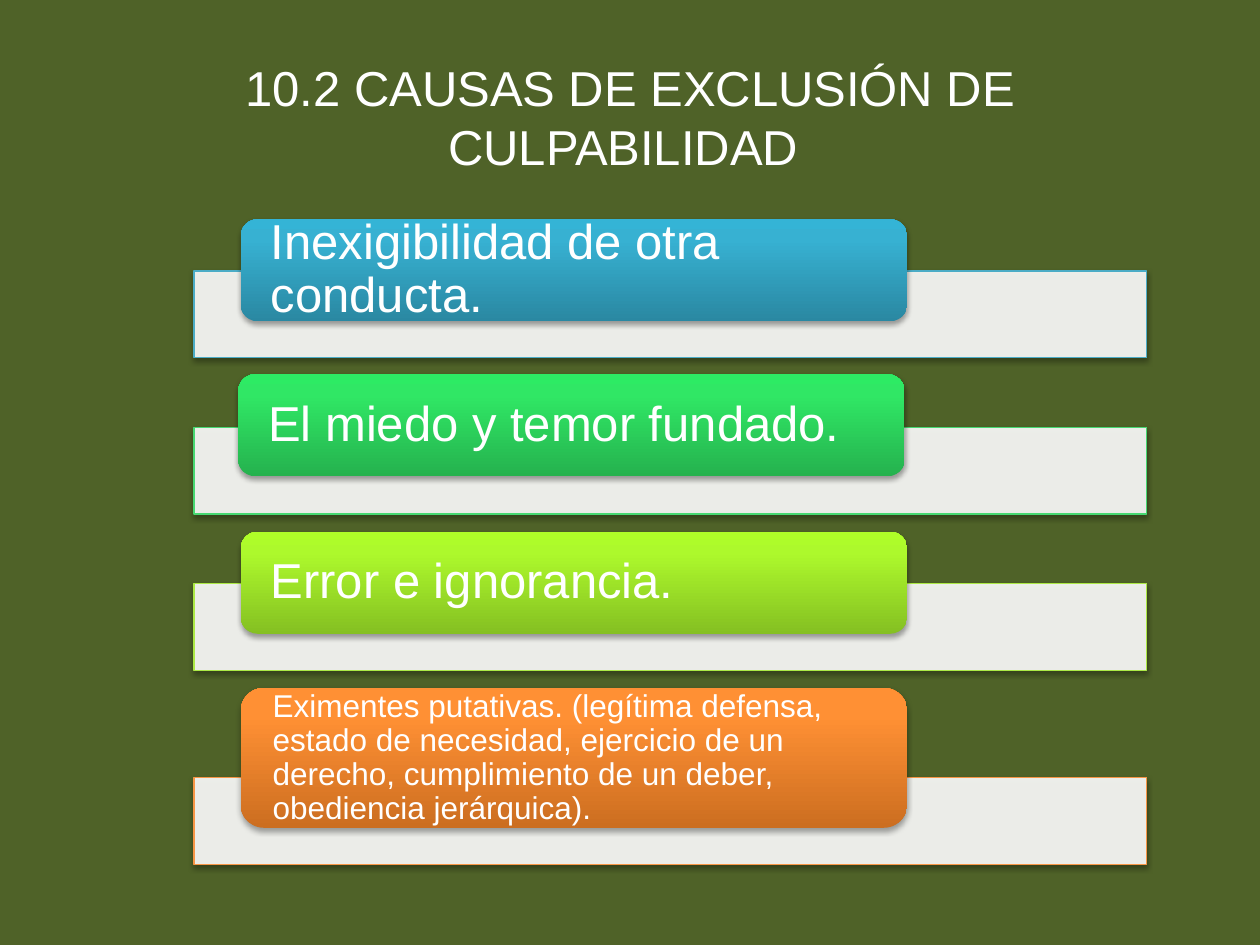
"""Builds the slide on the causes that exclude culpability."""
from lxml import etree
from pptx import Presentation, util as u
from pptx.dml.color import RGBColor
from pptx.enum import shapes, text
from pptx.oxml.ns import nsdecls, qn

OLIVE = RGBColor(0x4F, 0x62, 0x28)
WHITE = RGBColor(0xFF, 0xFF, 0xFF)
BLUE = RGBColor(0x4B, 0xAC, 0xC6)
GREEN = RGBColor(0x47, 0xD8, 0x72)
LIME = RGBColor(0xAC, 0xE9, 0x46)
ORANGE = RGBColor(0xF7, 0x96, 0x46)

TITLE = "10.2 CAUSAS DE EXCLUSIÓN DE CULPABILIDAD "
CAUSES = [
    {"label": "Inexigibilidad de otra conducta.", "edge": BLUE,
     "shades": ("2A88A2", "37B1D2", "34B4D6"), "size": 28,
     "bar_top": 2.15, "left": 1.91, "top": 1.74, "height": 0.81},
    {"label": "El miedo y temor fundado.", "edge": GREEN,
     "shades": ("25B24E", "30E765", "2DEB64"), "size": 28,
     "bar_top": 3.39, "left": 1.89, "top": 2.97, "height": 0.81},
    {"label": "Error e ignorancia.", "edge": LIME,
     "shades": ("85C022", "ADF92C", "AFFE28"), "size": 28,
     "bar_top": 4.63, "left": 1.91, "top": 4.22, "height": 0.81},
    {"label": "Eximentes putativas. (legítima defensa, estado de necesidad, "
              "ejercicio de un derecho, cumplimiento de un deber, "
              "obediencia jerárquica).", "edge": ORANGE,
     "shades": ("CC6E20", "FF9034", "FF9136"), "size": 18,
     "bar_top": 6.17, "left": 1.91, "top": 5.46, "height": 1.11},
]
BAR_LEFT, BAR_WIDTH, BAR_HEIGHT = 1.54, 7.56, 0.69
PILL_WIDTH = 5.29
STOPS = (0, 80, 100)


def write(frame, words, size, align, side=0.1, edge=0.05, spacing=1.0):
    frame.word_wrap = True
    frame.vertical_anchor = text.MSO_ANCHOR.MIDDLE
    frame.margin_left = frame.margin_right = u.Inches(side)
    frame.margin_top = frame.margin_bottom = u.Inches(edge)
    line = frame.paragraphs[0]
    line.alignment, line.line_spacing = align, spacing
    run = line.add_run()
    run.text = words
    run.font.name, run.font.size = "Arial", u.Pt(size)
    run.font.color.rgb = WHITE


def add_block(slide, kind, left, top, width, height):
    block = slide.shapes.add_shape(kind, *map(u.Inches, (left, top, width, height)))
    block.shadow.inherit = False
    shadow = etree.fromstring(
        f'<a:outerShdw {nsdecls("a")} blurRad="{u.Pt(3.1)}" dist="{u.Pt(1.8)}" '
        'dir="5400000" rotWithShape="0"><a:srgbClr val="000000">'
        '<a:alpha val="35000"/></a:srgbClr></a:outerShdw>')
    block.element.spPr.find(qn("a:effectLst")).append(shadow)
    return block


def add_bar(slide, top, edge):
    bar = add_block(slide, shapes.MSO_SHAPE.RECTANGLE,
                    BAR_LEFT, top, BAR_WIDTH, BAR_HEIGHT)
    bar.fill.solid()
    bar.fill.fore_color.rgb = WHITE
    tint = bar.element.spPr.find(qn("a:solidFill"))[0]
    etree.SubElement(tint, qn("a:alpha"), val="90000")
    bar.line.color.rgb, bar.line.width = edge, u.Pt(0.75)


def add_pill(slide, cause):
    pill = add_block(slide, shapes.MSO_SHAPE.ROUNDED_RECTANGLE,
                     cause["left"], cause["top"], PILL_WIDTH, cause["height"])
    pill.line.fill.background()
    stops = "".join(f'<a:gs pos="{stop * 1000}"><a:srgbClr val="{shade}"/></a:gs>'
                    for stop, shade in zip(STOPS, cause["shades"]))
    gradient = etree.fromstring(
        f'<a:gradFill {nsdecls("a")} rotWithShape="1"><a:gsLst>{stops}</a:gsLst>'
        '<a:lin ang="16200000" scaled="0"/></a:gradFill>')
    pill.element.spPr.find(qn("a:prstGeom")).addnext(gradient)
    write(pill.text_frame, cause["label"], cause["size"], text.PP_ALIGN.LEFT,
          side=0.2, edge=0, spacing=0.9)


def main():
    deck = Presentation()
    deck.slide_width, deck.slide_height = u.Inches(10), u.Inches(7.5)
    slide = deck.slides.add_slide(deck.slide_layouts[6])
    slide.background.fill.solid()
    slide.background.fill.fore_color.rgb = OLIVE
    heading = slide.shapes.add_textbox(*map(u.Inches, (0.5, 0.3, 9, 1.25)))
    write(heading.text_frame, TITLE, 28, text.PP_ALIGN.CENTER)
    for cause in CAUSES:
        add_bar(slide, cause["bar_top"], cause["edge"])
        add_pill(slide, cause)
    deck.save("out.pptx")


if __name__ == "__main__":
    main()
